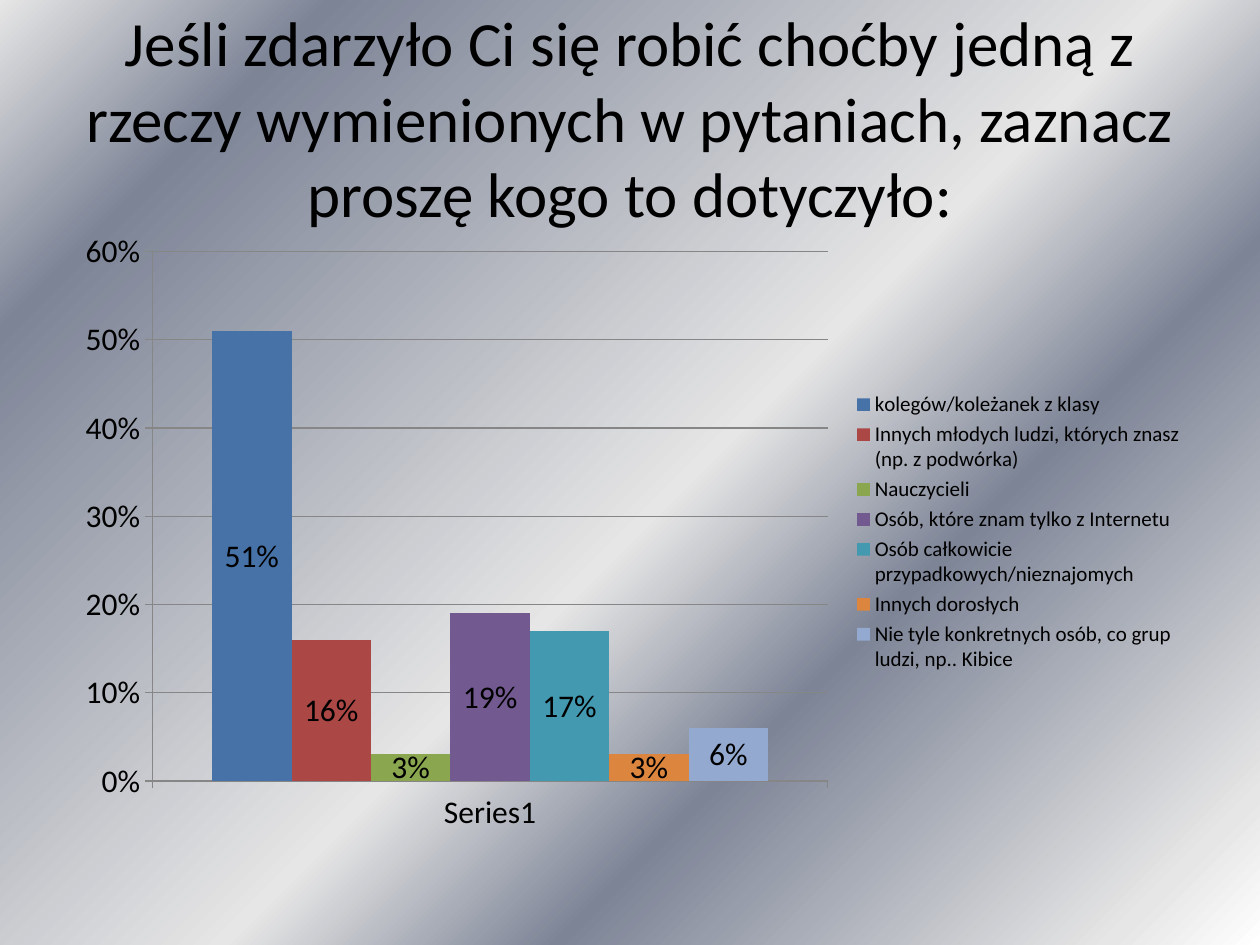
from lxml.etree import SubElement
from pptx import Presentation
from pptx.chart.data import CategoryChartData
from pptx.dml.color import RGBColor
from pptx.enum.chart import XL_CHART_TYPE as ChartType
from pptx.enum.chart import XL_LABEL_POSITION as LabelPosition
from pptx.enum.chart import XL_LEGEND_POSITION as LegendPosition
from pptx.enum.chart import XL_TICK_MARK as TickMark
from pptx.enum.text import MSO_ANCHOR as Anchor
from pptx.enum.text import MSO_AUTO_SIZE as AutoSize
from pptx.enum.text import PP_ALIGN as Align
from pptx.oxml.ns import qn
from pptx.util import Inches, Pt

PX = Inches(1) / 126
FONT = "Calibri"
PERCENT = "0%"
BLACK = RGBColor(0x00, 0x00, 0x00)
AXIS_GRAY = RGBColor(0x86, 0x86, 0x86)
WHITE = RGBColor(0xFF, 0xFF, 0xFF)
SILVER = RGBColor(0xE6, 0xE6, 0xE6)
STEEL = RGBColor(0x7D, 0x84, 0x96)
BLUE = RGBColor(0x46, 0x72, 0xA8)
RED = RGBColor(0xAB, 0x47, 0x44)
GREEN = RGBColor(0x8A, 0xA6, 0x4F)
PURPLE = RGBColor(0x72, 0x59, 0x90)
TEAL = RGBColor(0x42, 0x99, 0xB0)
ORANGE = RGBColor(0xDC, 0x85, 0x3E)
PALE_BLUE = RGBColor(0x93, 0xA9, 0xCF)

SHEEN = [(0, WHITE), (7, SILVER), (32, STEEL), (47, SILVER), (85, STEEL), (100, SILVER)]
QUESTION = (
    "Jeśli zdarzyło Ci się robić choćby jedną z rzeczy wymienionych "
    "w pytaniach, zaznacz proszę kogo to dotyczyło:"
)
ANSWERS = [
    ("kolegów/koleżanek z klasy", 0.51, BLUE),
    ("Innych młodych ludzi, których znasz (np. z podwórka)", 0.16, RED),
    ("Nauczycieli", 0.03, GREEN),
    ("Osób, które znam tylko z Internetu", 0.19, PURPLE),
    ("Osób całkowicie przypadkowych/nieznajomych", 0.17, TEAL),
    ("Innych dorosłych", 0.03, ORANGE),
    ("Nie tyle konkretnych osób, co grup ludzi, np.. Kibice", 0.06, PALE_BLUE),
]


def px(*lengths):
    """Turn pixel lengths into EMU."""
    return [round(length * PX) for length in lengths]


def format_font(font, size, color=BLACK):
    """Set the typeface, size and colour of a font."""
    font.name = FONT
    font.size = Pt(size)
    font.color.rgb = color


def write_text(holder, text, *, size, color=BLACK, align=Align.CENTER, anchor=Anchor.MIDDLE):
    """Fill a text holder with one formatted paragraph."""
    frame = holder.text_frame
    frame.word_wrap = True
    frame.auto_size = AutoSize.NONE
    frame.vertical_anchor = anchor
    paragraph = frame.paragraphs[0]
    paragraph.alignment = align
    run = paragraph.add_run()
    run.text = text
    format_font(run.font, size, color)


def paint_background(slide, stops, angle):
    """Give the slide a linear gradient with the given percent stops."""
    fill = slide.background.fill
    fill.gradient()
    fill.gradient_angle = angle
    stop_list = slide.element.find(".//" + qn("a:gsLst"))
    stop_list.clear()
    for percent, color in stops:
        stop = SubElement(stop_list, qn("a:gs"), pos=str(percent * 1000))
        SubElement(stop, qn("a:srgbClr"), val=str(color))


def add_title(slide, text, box):
    """Place and fill the title placeholder."""
    title = slide.shapes.title
    title.left, title.top, title.width, title.height = px(*box)
    write_text(title, text, size=36)


def format_axis(axis):
    """Give an axis its line, outer ticks and font."""
    axis.major_tick_mark = TickMark.OUTSIDE
    axis.minor_tick_mark = TickMark.NONE
    axis.format.line.color.rgb = AXIS_GRAY
    format_font(axis.tick_labels.font, 18)


def format_series(series, color):
    """Colour the bars of a series and label them with centred percentages."""
    series.smooth = False
    series.invert_if_negative = False
    series.format.fill.solid()
    series.format.fill.fore_color.rgb = color
    labels = series.data_labels
    labels.show_value = True
    labels.position = LabelPosition.CENTER
    labels.number_format = PERCENT
    labels.number_format_is_linked = False
    format_font(labels.font, 18)


def add_answer_chart(slide, answers, box):
    """Draw the answers as clustered columns with a legend on the right."""
    data = CategoryChartData(number_format=PERCENT)
    data.categories = ["Series1"]
    for name, share, _ in answers:
        data.add_series(name, [share])
    chart = slide.shapes.add_chart(ChartType.COLUMN_CLUSTERED, *px(*box), data).chart
    chart.has_title = False
    format_font(chart.font, 18)

    format_axis(chart.category_axis)
    shares = chart.value_axis
    format_axis(shares)
    shares.minimum_scale, shares.maximum_scale, shares.major_unit = 0, 0.6, 0.1
    shares.has_major_gridlines = True
    shares.major_gridlines.format.line.color.rgb = AXIS_GRAY
    shares.tick_labels.number_format = PERCENT
    shares.tick_labels.number_format_is_linked = False

    columns = chart.plots[0]
    columns.gap_width = 150
    columns.overlap = 0
    columns.vary_by_categories = False
    for series, (_, _, color) in zip(columns.series, answers):
        format_series(series, color)

    chart.has_legend = True
    chart.legend.position = LegendPosition.RIGHT
    chart.legend.include_in_layout = False
    format_font(chart.legend.font, 12)


def main():
    """Build and save the survey slide."""
    deck = Presentation()
    deck.slide_width, deck.slide_height = px(1260, 945)
    slide = deck.slides.add_slide(deck.slide_layouts.get_by_name("Title Only"))
    paint_background(slide, SHEEN, 135)
    add_title(slide, QUESTION, (63, 38, 1134, 158))
    add_answer_chart(slide, ANSWERS, (63, 220, 1134, 624))
    deck.save("out.pptx")


if __name__ == "__main__":
    main()
